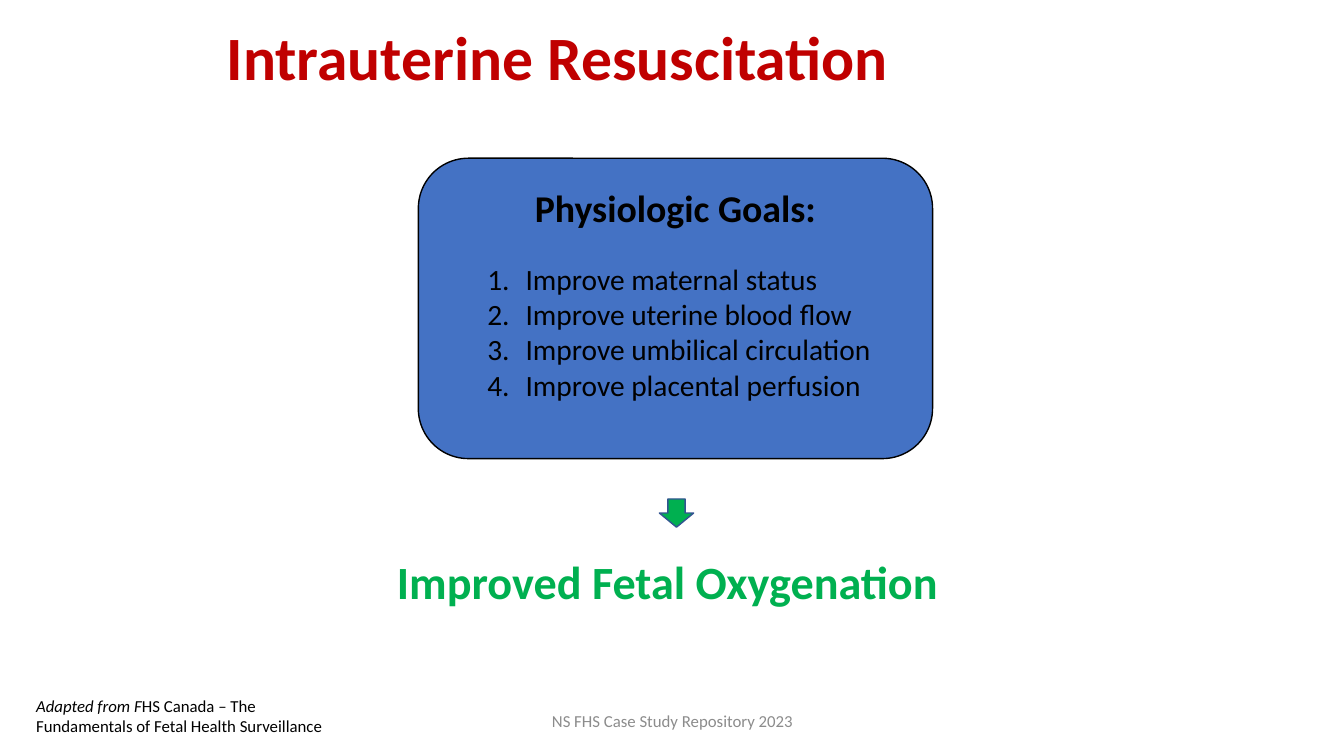
import dataclasses
import typing

import pptx
import pptx.dml.color
import pptx.enum.shapes
import pptx.enum.text
import pptx.oxml.xmlchemy
import pptx.util
import lxml.etree

KIND = pptx.enum.shapes.MSO_SHAPE
ALIGN = pptx.enum.text.PP_ALIGN
ANCHOR = pptx.enum.text.MSO_ANCHOR
WIDE, HIGH = 13.33, 7.5


# Colours and type sizes
@dataclasses.dataclass(frozen=True)
class Theme:
    font: str = "Calibri"
    red: str = "C00000"
    blue: str = "4472C4"
    green: str = "00B050"
    navy: str = "325491"
    black: str = "000000"
    grey: str = "8C8C8C"
    title: int = 44
    result: int = 33
    head: int = 27
    item: int = 21
    small: int = 12


THEME = Theme()


# Places are percentages of the slide's width and height
class Place(typing.NamedTuple):
    left: float
    top: float
    width: float
    height: float


class Run(typing.NamedTuple):
    text: str
    size: int
    color: str
    bold: bool = False
    slant: bool = False


@dataclasses.dataclass(frozen=True)
class Label:
    place: Place
    runs: list[Run]
    align: ALIGN = ALIGN.CENTER
    anchor: ANCHOR = ANCHOR.TOP
    lead: float = 1.0


@dataclasses.dataclass(frozen=True)
class Block:
    kind: KIND
    place: Place
    fill: str
    line: str


LABELS = [
    Label(Place(16.13, 1.33, 67.89, 13.33),
          [Run("Intrauterine Resuscitation", THEME.title, THEME.red, True)],
          ALIGN.LEFT, ANCHOR.MIDDLE, 0.9),
    Label(Place(24.38, 72.53, 50.56, 8.8),
          [Run("Improved Fetal Oxygenation", THEME.result, THEME.green, True)]),
    Label(Place(33.16, 92.67, 33.76, 5.33),
          [Run("NS FHS Case Study Repository 2023", THEME.small, THEME.grey)],
          anchor=ANCHOR.MIDDLE),
    Label(Place(1.95, 91.33, 25.06, 6.67),
          [Run("Adapted from F", THEME.small, THEME.black, slant=True),
           Run("HS Canada – The Fundamentals of Fetal Health Surveillance",
               THEME.small, THEME.black)],
          ALIGN.LEFT),
]
PANEL = Block(KIND.ROUNDED_RECTANGLE, Place(31.13, 20.93, 38.26, 39.73),
              THEME.blue, THEME.black)
ARROW = Block(KIND.DOWN_ARROW, Place(49.06, 66, 2.55, 3.73),
              THEME.green, THEME.navy)
GOALS = [
    "Improve maternal status",
    "Improve uterine blood flow",
    "Improve umbilical circulation",
    "Improve placental perfusion",
]


def frame(place: Place) -> list[int]:
    """Turn percentages into slide lengths."""
    sides = (WIDE, HIGH, WIDE, HIGH)
    return [pptx.util.Inches(share * side / 100)
            for share, side in zip(place, sides)]


def paint(name: str) -> pptx.dml.color.RGBColor:
    return pptx.dml.color.RGBColor.from_string(name)


def write(para: typing.Any, run: Run) -> None:
    part = para.add_run()
    part.text = run.text
    font = part.font
    font.name, font.size = THEME.font, pptx.util.Pt(run.size)
    font.bold, font.italic = run.bold, run.slant
    font.color.rgb = paint(run.color)


def add_label(slide: typing.Any, label: Label) -> None:
    text = slide.shapes.add_textbox(*frame(label.place)).text_frame
    text.word_wrap = True
    text.vertical_anchor = label.anchor
    para = text.paragraphs[0]
    para.alignment, para.line_spacing = label.align, label.lead
    for run in label.runs:
        write(para, run)


def add_block(slide: typing.Any, block: Block) -> typing.Any:
    shape = slide.shapes.add_shape(block.kind, *frame(block.place))
    shape.shadow.inherit = False
    shape.fill.solid()
    shape.fill.fore_color.rgb = paint(block.fill)
    shape.line.color.rgb = paint(block.line)
    shape.line.width = pptx.util.Pt(1)
    return shape


def number(para: typing.Any) -> None:
    """Give a paragraph a hanging automatic number."""
    props = para._p.get_or_add_pPr()
    props.set("marL", str(pptx.util.Inches(0.82)))
    props.set("indent", str(pptx.util.Inches(-0.38)))
    mark = lxml.etree.SubElement(props, pptx.oxml.ns.qn("a:buAutoNum"))
    mark.set("type", "arabicPeriod")


def add_goals(slide: typing.Any) -> None:
    text = add_block(slide, PANEL).text_frame
    text.word_wrap = True
    text.vertical_anchor = ANCHOR.MIDDLE
    text.margin_bottom = pptx.util.Inches(0.35)
    head = text.paragraphs[0]
    head.alignment = ALIGN.CENTER
    head.space_after = pptx.util.Pt(22)
    write(head, Run("Physiologic Goals:", THEME.head, THEME.black, True))
    for goal in GOALS:
        para = text.add_paragraph()
        para.alignment = ALIGN.LEFT
        para.level = 1
        number(para)
        write(para, Run(goal, THEME.item, THEME.black))


def main() -> None:
    deck = pptx.Presentation()
    deck.slide_width = pptx.util.Inches(WIDE)
    deck.slide_height = pptx.util.Inches(HIGH)
    slide = deck.slides.add_slide(deck.slide_layouts[6])

    # Goals lead down to the result
    add_goals(slide)
    add_block(slide, ARROW)

    # Title, result and footers
    for label in LABELS:
        add_label(slide, label)
    deck.save("out.pptx")


if __name__ == "__main__":
    main()
